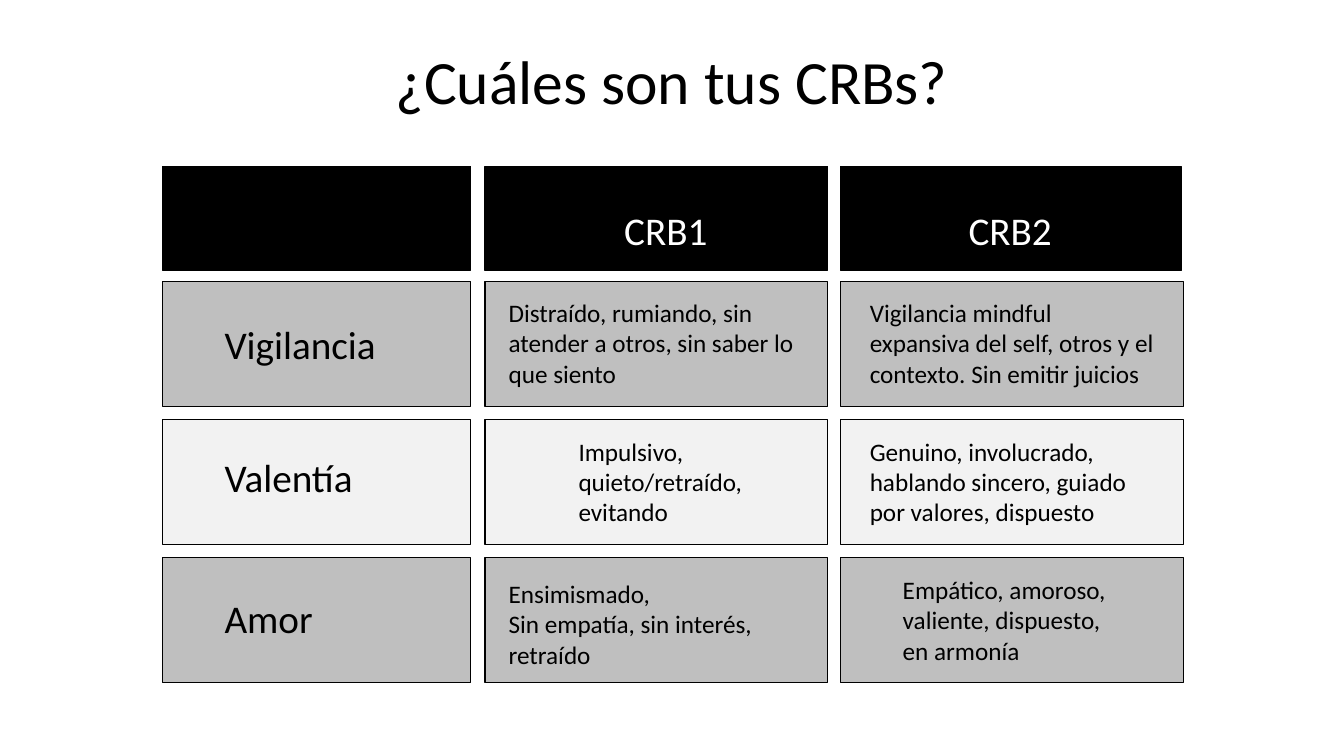
from dataclasses import dataclass

from pptx import Presentation
from pptx.dml.color import RGBColor
from pptx.enum.shapes import MSO_SHAPE as Preset
from pptx.enum.text import MSO_ANCHOR as Anchor, MSO_AUTO_SIZE as AutoSize, PP_ALIGN as Align
from pptx.util import Cm, Pt


@dataclass(frozen=True)
class Theme:
    font: str = "Calibri"
    black: str = "000000"
    white: str = "FFFFFF"
    gray: str = "BFBFBF"
    pale: str = "F2F2F2"
    title_size: int = 44
    label_size: int = 28
    body_size: int = 18
    line_width: int = 1


@dataclass(frozen=True)
class Cell:
    """Text of one grid cell, with its own left, top and width in cm."""
    text: str
    left: float
    top: float
    width: float
    preset: Preset = Preset.FLOWCHART_PROCESS


class SlideBuilder:
    def __init__(self, page, theme):
        self.page = page
        self.theme = theme

    def fill_frame(self, frame, text, size, color, align):
        frame.text = text
        for para in frame.paragraphs:
            para.alignment = align
            para.font.name = self.theme.font
            para.font.size = Pt(size)
            para.font.color.rgb = RGBColor.from_string(color)

    def title(self, text, left, top, width, height):
        title = self.page.shapes.title
        title.left, title.top = Cm(left), Cm(top)
        title.width, title.height = Cm(width), Cm(height)
        frame = title.text_frame
        self.fill_frame(frame, text, self.theme.title_size, self.theme.black, Align.CENTER)
        frame.vertical_anchor = Anchor.MIDDLE
        frame.paragraphs[0].line_spacing = 0.9

    def box(self, left, top, width, height, fill, preset=Preset.FLOWCHART_PROCESS):
        box = self.page.shapes.add_shape(preset, Cm(left), Cm(top), Cm(width), Cm(height))
        box.shadow.inherit = False
        box.fill.solid()
        box.fill.fore_color.rgb = RGBColor.from_string(fill)
        box.line.color.rgb = RGBColor.from_string(self.theme.black)
        box.line.width = Pt(self.theme.line_width)

    def text(self, cell, height, size, color, align=Align.LEFT):
        area = self.page.shapes.add_textbox(
            Cm(cell.left), Cm(cell.top), Cm(cell.width), Cm(height))
        frame = area.text_frame
        frame.word_wrap = True
        frame.auto_size = AutoSize.SHAPE_TO_FIT_TEXT
        self.fill_frame(frame, cell.text, size, color, align)


COLUMNS = [(4.09, 7.77), (12.22, 8.64), (21.18, 8.64)]  # left, width
HEADER_WIDTHS = [7.77, 8.64, 8.59]
HEADER_TOP, HEADER_HEIGHT = 4.19, 2.62
FIRST_ROW_TOP, ROW_HEIGHT, ROW_PITCH = 7.09, 3.15, 3.48
LABEL_HEIGHT, BODY_HEIGHT = 1.45, 2.57

HEADERS = [Cell("CRB1", 14.43, 5.08, 4.7), Cell("CRB2", 24.16, 5.08, 2.7)]
ROWS = [
    [Cell("Vigilancia", 5.41, 7.95, 5.33),
     Cell("Distraído, rumiando, sin atender a otros, sin saber lo que siento",
          12.57, 7.37, 8.05, Preset.RECTANGLE),
     Cell("Vigilancia mindful expansiva del self, otros y el contexto. Sin emitir juicios",
          21.67, 7.37, 7.75)],
    [Cell("Valentía", 5.41, 11.3, 5.33),
     Cell("Impulsivo,\nquieto/retraído,\nevitando", 14.33, 10.87, 5.21),
     Cell("Genuino, involucrado, hablando sincero, guiado por valores, dispuesto",
          21.67, 10.87, 7.75)],
    [Cell("Amor", 5.41, 14.86, 4.5),
     Cell("Ensimismado,\nSin empatía, sin interés,\nretraído", 12.57, 14.45, 8.05),
     Cell("Empático, amoroso,\nvaliente, dispuesto,\nen armonía",
          22.5, 14.35, 5.94, Preset.RECTANGLE)],
]


def main():
    deck = Presentation()
    deck.slide_width, deck.slide_height = Cm(33.87), Cm(19.05)
    theme = Theme()
    builder = SlideBuilder(deck.slides.add_slide(deck.slide_layouts[5]), theme)

    builder.title("¿Cuáles son tus CRBs?", 2.33, 1.01, 29.21, 2.26)
    for (left, _), width in zip(COLUMNS, HEADER_WIDTHS):
        builder.box(left, HEADER_TOP, width, HEADER_HEIGHT, theme.black)
    for header, align in zip(HEADERS, (Align.CENTER, Align.LEFT)):
        builder.text(header, LABEL_HEIGHT, theme.label_size, theme.white, align)

    for index, row in enumerate(ROWS):
        top = FIRST_ROW_TOP + index * ROW_PITCH
        fill = theme.pale if index % 2 else theme.gray
        for (left, width), cell in zip(COLUMNS, row):
            builder.box(left, top, width, ROW_HEIGHT, fill, cell.preset)
        label, *bodies = row
        builder.text(label, LABEL_HEIGHT, theme.label_size, theme.black)
        for body in bodies:
            builder.text(body, BODY_HEIGHT, theme.body_size, theme.black)

    deck.save("out.pptx")


if __name__ == "__main__":
    main()
